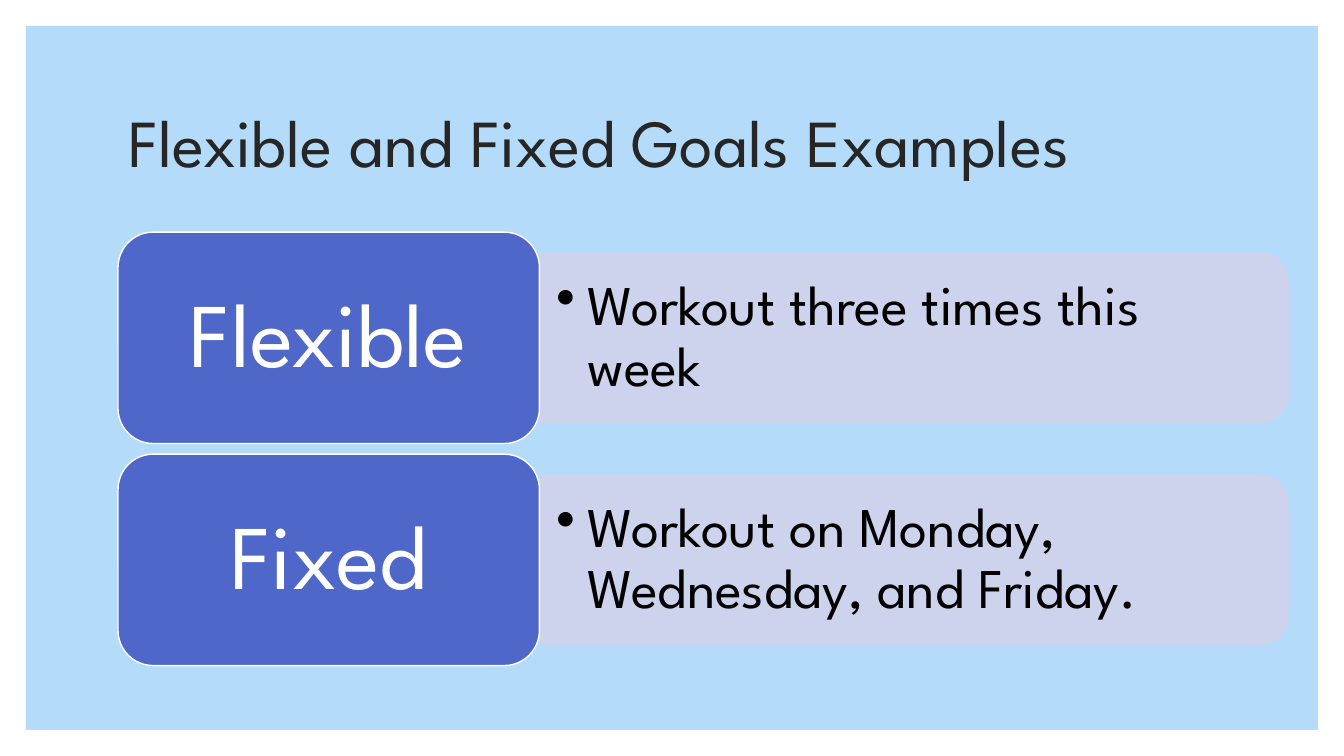
from lxml import etree
from pptx import Presentation
from pptx.dml.color import RGBColor
from pptx.enum.shapes import MSO_SHAPE as Preset
from pptx.enum.text import MSO_ANCHOR as Anchor, MSO_AUTO_SIZE as AutoSize, PP_ALIGN as Align
from pptx.oxml.ns import qn
from pptx.util import Pt

# Content
TITLE = "Flexible and Fixed Goals Examples"
GOALS = [
    ("Flexible", "Workout three times this week"),
    ("Fixed", "Workout on Monday, Wednesday, and Friday."),
]

# Style
FONT = "League Spartan"
SKY = RGBColor(0xB4, 0xDC, 0xFA)
BLUE = RGBColor(0x4E, 0x67, 0xC8)
LAVENDER = RGBColor(0xD0, 0xD3, 0xEB)
CHARCOAL = RGBColor(0x26, 0x26, 0x26)
BLACK = RGBColor(0, 0, 0)
WHITE = RGBColor(0xFF, 0xFF, 0xFF)

# Layout in points
PAGE_WIDTH, PAGE_HEIGHT = 960, 540
MARGIN = 18.6
LEFT, FIRST_TOP = 84.3, 165.8
LABEL_WIDTH, LABEL_HEIGHT = 301, 151
ROW_STEP = 158.6
PANEL_WIDTH, PANEL_HEIGHT = 535, 121
TEXT_WIDTH, TEXT_HEIGHT = 529, 109
BULLET_INDENT = 22.5


def write_text(box, text, size, color, align=Align.LEFT, insets=(7.2, 3.6), bullet=False):
    frame = box.text_frame
    frame.word_wrap = True
    frame.auto_size = AutoSize.NONE
    frame.vertical_anchor = Anchor.MIDDLE
    frame.margin_left = frame.margin_right = Pt(insets[0])
    frame.margin_top = frame.margin_bottom = Pt(insets[1])
    para = frame.paragraphs[0]
    para.alignment = align
    para.line_spacing = 0.9
    span = para.add_run()
    span.text = text
    span.font.name = FONT
    span.font.size = Pt(size)
    span.font.color.rgb = color
    if bullet:
        settings = para._p.get_or_add_pPr()
        settings.set("marL", str(Pt(BULLET_INDENT)))
        settings.set("indent", str(-Pt(BULLET_INDENT)))
        etree.SubElement(settings, qn("a:buChar"), char="•")


def add_block(preset, left, top, width, height, fill, line=None, opacity=None):
    block = page.shapes.add_shape(preset, Pt(left), Pt(top), Pt(width), Pt(height))
    block.shadow.inherit = False
    block.fill.solid()
    block.fill.fore_color.rgb = fill
    if line is None:
        block.line.fill.background()
    else:
        block.line.color.rgb = line
        block.line.width = Pt(1)
    if opacity is not None:
        for color in block._element.spPr.iter(qn("a:srgbClr")):
            etree.SubElement(color, qn("a:alpha"), val=str(opacity * 1000))
    return block


deck = Presentation()
deck.slide_width, deck.slide_height = Pt(PAGE_WIDTH), Pt(PAGE_HEIGHT)
page = deck.slides.add_slide(deck.slide_layouts[5])

# Backdrop, moved behind the title
backdrop = add_block(Preset.RECTANGLE, MARGIN, MARGIN, PAGE_WIDTH - 2 * MARGIN, 502.8, SKY)
page.shapes._spTree.insert(2, backdrop._element)

# Title
title = page.shapes.title
title.left, title.top, title.width, title.height = Pt(LEFT), Pt(50.4), Pt(811.4), Pt(108)
write_text(title, TITLE, 48, CHARCOAL)

# One row per goal: panel, example, label
panel_left = LEFT + LABEL_WIDTH
for row, (name, example) in enumerate(GOALS):
    top = FIRST_TOP + row * ROW_STEP
    middle = top + LABEL_HEIGHT / 2

    # The panel is turned so that its rounded corners face right
    panel = add_block(Preset.ROUND_2_SAME_RECTANGLE,
                      panel_left + (PANEL_WIDTH - PANEL_HEIGHT) / 2, middle - PANEL_WIDTH / 2,
                      PANEL_HEIGHT, PANEL_WIDTH, LAVENDER, line=LAVENDER, opacity=90)
    panel.rotation = 90

    note = page.shapes.add_textbox(Pt(panel_left), Pt(middle - TEXT_HEIGHT / 2),
                                   Pt(TEXT_WIDTH), Pt(TEXT_HEIGHT))
    write_text(note, example, 40, BLACK, insets=(12, 6), bullet=True)

    label = add_block(Preset.ROUNDED_RECTANGLE, LEFT, top, LABEL_WIDTH, LABEL_HEIGHT,
                      BLUE, line=WHITE)
    write_text(label, name, 65, WHITE, align=Align.CENTER, insets=(19.5, 9.75))

deck.save("out.pptx")
